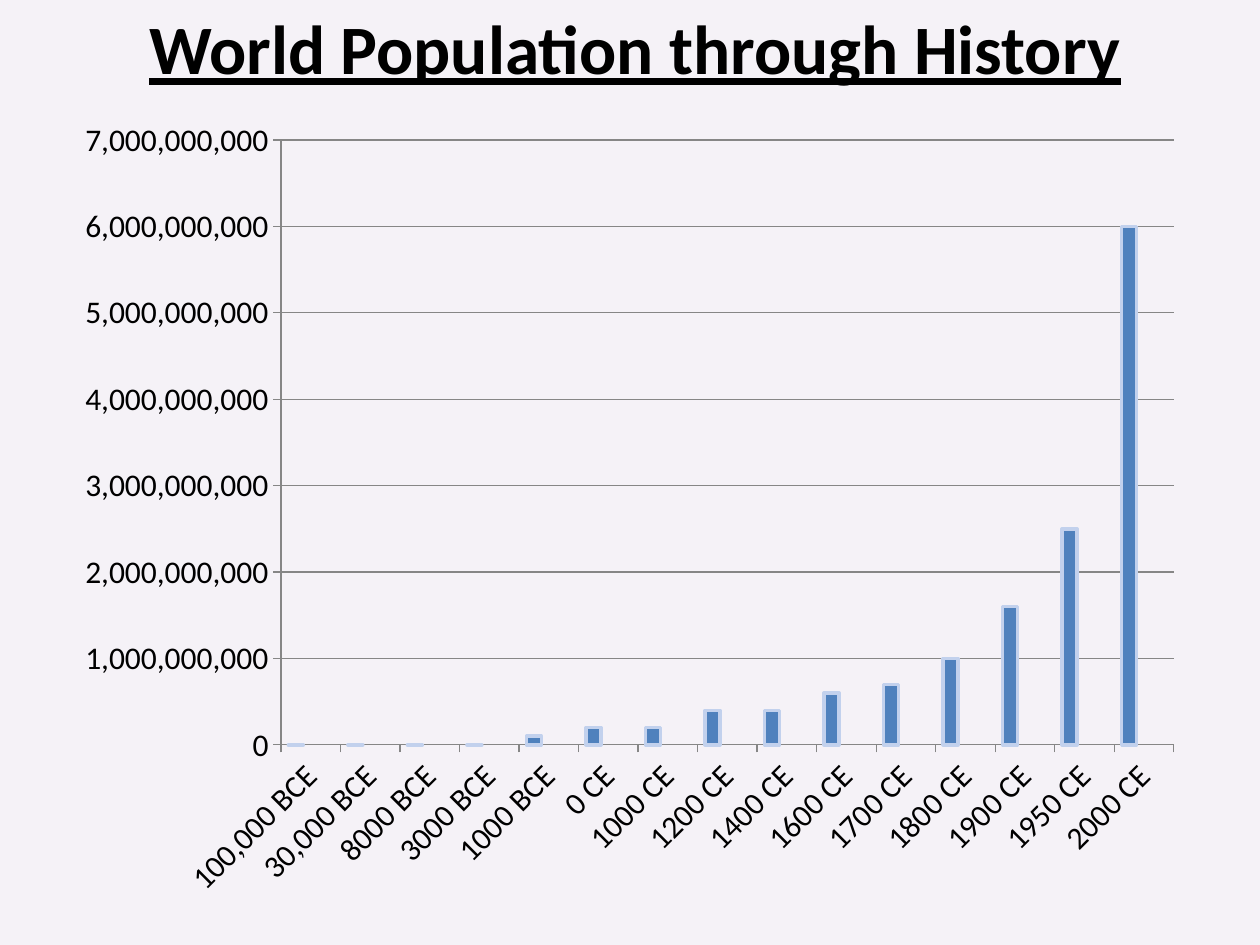
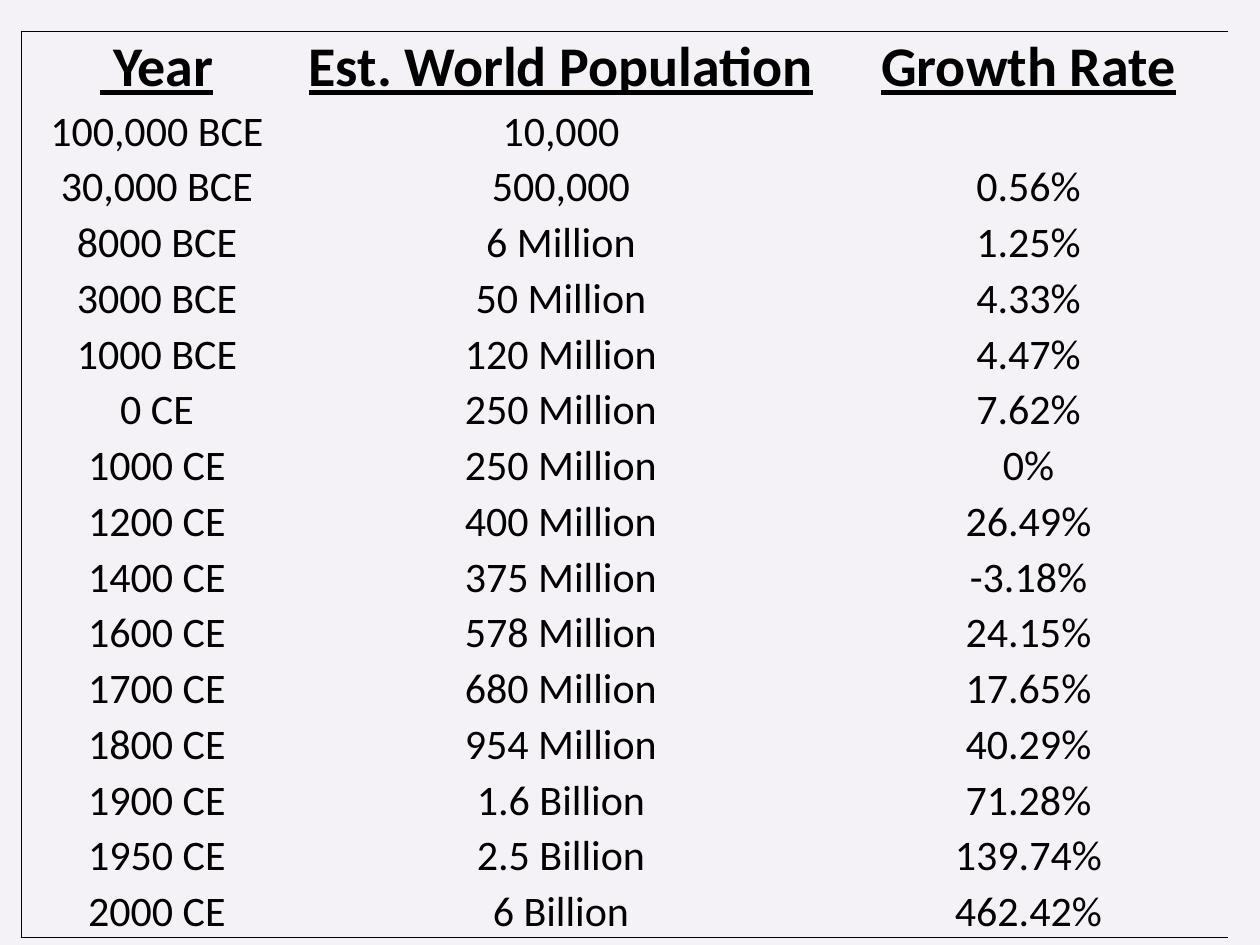
from lxml import etree
from pptx import Presentation
from pptx.chart.data import CategoryChartData
from pptx.dml.color import RGBColor
from pptx.enum.chart import XL_CHART_TYPE as Kind, XL_TICK_MARK as Tick
from pptx.enum.text import MSO_ANCHOR as Anchor, MSO_AUTO_SIZE as Fit, PP_ALIGN as Align
from pptx.oxml import parse_xml
from pptx.oxml.ns import nsdecls, qn
from pptx.util import Emu, Pt

FACE = "Calibri"
INK = "000000"
PAPER = "F5F2F7"
GRID = "868686"
NO_STYLE = "{2D5ABB26-0587-4C30-8999-92F81FD0307C}"

HEAD = (" Year", "Est. World Population", "Growth Rate")
# Year, people in hundreds of millions for the chart, people as text, growth
DATA = [
    ("100,000 BCE", 0, "10,000", ""),
    ("30,000 BCE", 0, "500,000", "0.56%"),
    ("8000 BCE", 0, "6 Million", "1.25%"),
    ("3000 BCE", 0, "50 Million", "4.33%"),
    ("1000 BCE", 1, "120 Million", "4.47%"),
    ("0 CE", 2, "250 Million", "7.62%"),
    ("1000 CE", 2, "250 Million", "0%"),
    ("1200 CE", 4, "400 Million", "26.49%"),
    ("1400 CE", 4, "375 Million", "-3.18%"),
    ("1600 CE", 6, "578 Million", "24.15%"),
    ("1700 CE", 7, "680 Million", "17.65%"),
    ("1800 CE", 10, "954 Million", "40.29%"),
    ("1900 CE", 16, "1.6 Billion", "71.28%"),
    ("1950 CE", 25, "2.5 Billion", "139.74%"),
    ("2000 CE", 60, "6 Billion", "462.42%"),
]


def px(n):
    return Emu(round(n * 914400 / 126))


def tint(code):
    return RGBColor.from_string(code)


def style(font, size, bold=False, under=False):
    font.name, font.size = FACE, Pt(size)
    font.bold, font.underline = bold, under
    font.color.rgb = tint(INK)


def write(frame, text, **look):
    para = frame.paragraphs[0]
    para.alignment = Align.CENTER
    run = para.add_run()
    run.text = text
    style(run.font, **look)


def add_title(slide, text, box):
    title = slide.shapes.title
    title.left, title.top, title.width, title.height = map(px, box)
    frame = title.text_frame
    frame.word_wrap, frame.auto_size = True, Fit.NONE
    frame.vertical_anchor = Anchor.MIDDLE
    write(frame, text, size=39.6, bold=True, under=True)


def place_plot(chart, box, inner):
    """Pin the inner plot area; both boxes are in px on the slide."""
    left, top, width, height = box
    x, y, w, h = inner
    parts = dict(x=(x - left) / width, y=(y - top) / height, w=w / width, h=h / height)
    area = chart._chartSpace.chart.plotArea
    for old in area.findall(qn("c:layout")):
        area.remove(old)
    sizes = "".join(f'<c:{key} val="{val:.4f}"/>' for key, val in parts.items())
    area.insert(0, parse_xml(
        f'<c:layout {nsdecls("c")}><c:manualLayout><c:layoutTarget val="inner"/>'
        f'<c:xMode val="edge"/><c:yMode val="edge"/>{sizes}'
        '</c:manualLayout></c:layout>'))


def style_axis(axis):
    style(axis.tick_labels.font, 18)
    axis.major_tick_mark, axis.minor_tick_mark = Tick.OUTSIDE, Tick.NONE
    axis.format.line.color.rgb = tint(GRID)


def add_bars(slide, box, inner):
    data = CategoryChartData(number_format="#,##0")
    data.categories = [row[0] for row in DATA]
    data.add_series("Series 1", [row[1] * 100_000_000 for row in DATA])
    for name in ("Series 2", "Series 3"):
        data.add_series(name, [None] * len(DATA))
    chart = slide.shapes.add_chart(Kind.COLUMN_CLUSTERED, *map(px, box), data).chart
    chart.has_legend = chart.has_title = False
    style(chart.font, 18)
    plot = chart.plots[0]
    plot.gap_width, plot.vary_by_categories = 100, False
    for bars, code in zip(plot.series, ("4F81BD", "C0504D", "9BBB59")):
        bars.format.fill.solid()
        bars.format.fill.fore_color.rgb = tint(code)
    edge = plot.series[0].format.line
    edge.color.rgb, edge.width = tint("C2D1ED"), Pt(2)

    years, people = chart.category_axis, chart.value_axis
    for axis in (years, people):
        style_axis(axis)
    years._element.txPr.bodyPr.set("rot", "-2700000")
    people.minimum_scale, people.maximum_scale = 0, 7_000_000_000
    people.major_unit = 1_000_000_000
    people.tick_labels.number_format = "#,##0"
    people.tick_labels.number_format_is_linked = False
    people.has_major_gridlines = True
    people.major_gridlines.format.line.color.rgb = tint(GRID)
    place_plot(chart, box, inner)


def rule(cell, side):
    line = etree.SubElement(cell._tc.get_or_add_tcPr(), qn(f"a:ln{side}"), w=str(Pt(0.5)))
    fill = etree.SubElement(line, qn("a:solidFill"))
    etree.SubElement(fill, qn("a:srgbClr"), val=INK)


def fill_cell(cell, text, sides, **look):
    cell.margin_left = cell.margin_right = cell.margin_top = px(1)
    cell.margin_bottom = 0
    cell.vertical_anchor = Anchor.BOTTOM
    for side in sides:
        rule(cell, side)
    cell.fill.background()
    if text:
        write(cell.text_frame, text, **look)


def add_grid(slide, left, top, widths, head, body):
    """Draw the table: a head row, then the data rows sharing the body height."""
    rows = [HEAD] + [(year, people, rate) for year, _, people, rate in DATA]
    last = len(rows) - 1
    box = map(px, (left, top, sum(widths), head + body))
    table = slide.shapes.add_table(len(rows), len(widths), *box).table
    table.first_row = table.horz_banding = False
    table._tbl.tblPr.find(qn("a:tableStyleId")).text = NO_STYLE
    for col, width in zip(table.columns, widths):
        col.width = px(width)
    ends = [round(body * i / last) for i in range(last + 1)]
    for r, row in enumerate(rows):
        table.rows[r].height = px(ends[r] - ends[r - 1] if r else head)
        look = dict(size=24) if r else dict(size=32, bold=True, under=True)
        for c, text in enumerate(row):
            sides = "L" * (c == 0) + "T" * (r == 0) + "B" * (r == last)
            fill_cell(table.cell(r, c), text, sides, **look)


def main():
    deck = Presentation()
    deck.slide_width, deck.slide_height = px(1260), px(945)
    paper = deck.slide_master.background.fill
    paper.solid()
    paper.fore_color.rgb = tint(PAPER)

    growth = deck.slides.add_slide(deck.slide_layouts[5])
    add_title(growth, "World Population through History", (21, 10, 1228, 74))
    add_bars(growth, (63, 105, 1134, 809), inner=(281, 140, 893, 605))

    counts = deck.slides.add_slide(deck.slide_layouts[6])
    add_grid(counts, 21, 31, (272, 536, 399), head=71, body=836)
    deck.save("out.pptx")


if __name__ == "__main__":
    main()
